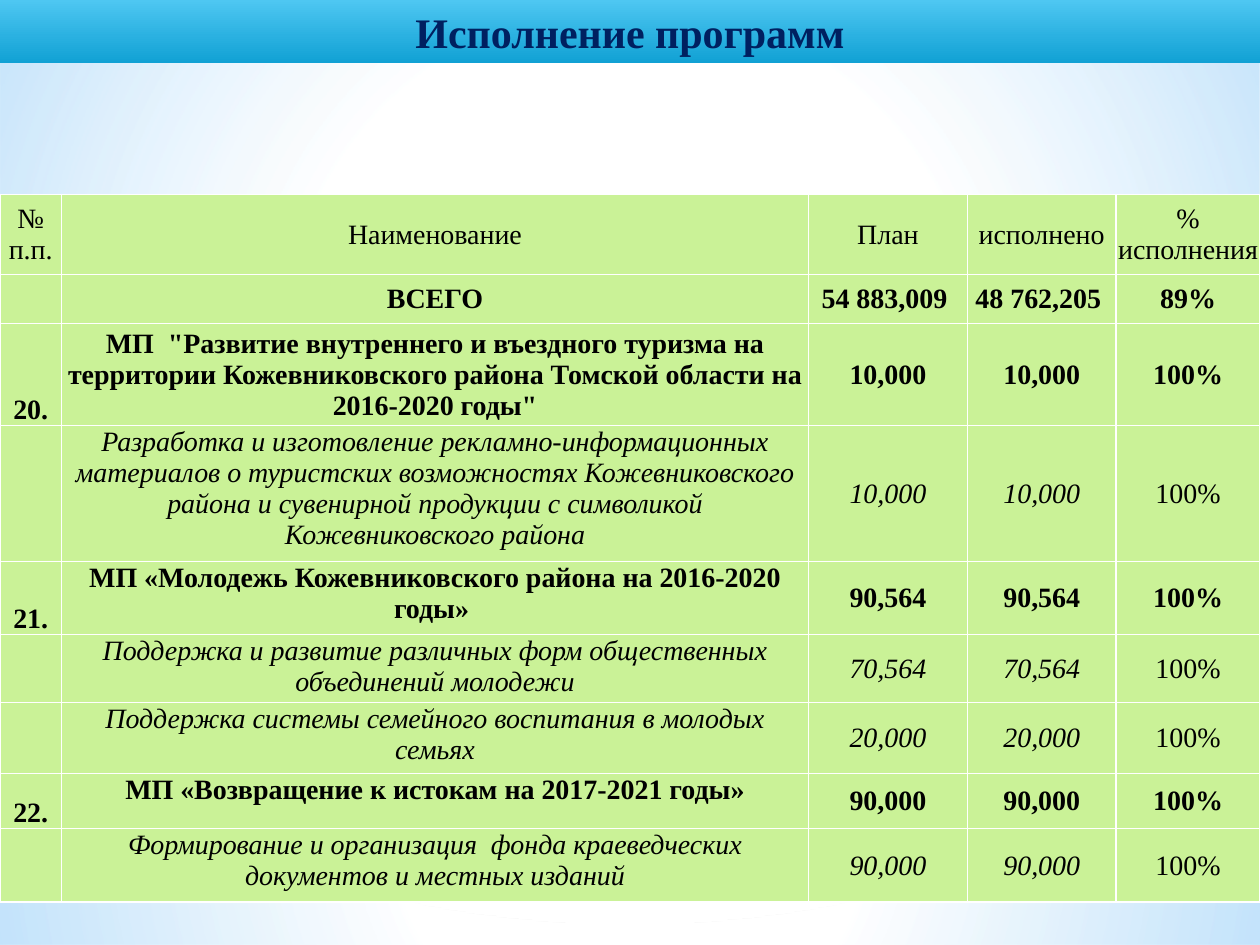
"""Build the slide on programme execution with its table of plan and result."""
from lxml import etree
from pptx import Presentation
from pptx.dml.color import RGBColor
from pptx.enum.shapes import MSO_SHAPE
from pptx.enum.text import MSO_ANCHOR, PP_ALIGN
from pptx.oxml.ns import qn
from pptx.util import Cm, Pt

RECTANGLE, OVAL = MSO_SHAPE.RECTANGLE, MSO_SHAPE.OVAL
TOP, MIDDLE, BOTTOM = MSO_ANCHOR.TOP, MSO_ANCHOR.MIDDLE, MSO_ANCHOR.BOTTOM
CENTER = PP_ALIGN.CENTER
WHITE = RGBColor(0xFF, 0xFF, 0xFF)
BLACK = RGBColor(0x00, 0x00, 0x00)
NAVY = RGBColor(0x00, 0x20, 0x60)
PALE_BLUE = RGBColor(0xB4, 0xDC, 0xFA)
LIGHT_CYAN = RGBColor(0x4E, 0xC7, 0xF2)
DEEP_CYAN = RGBColor(0x11, 0xA1, 0xD4)
GREEN = RGBColor(0xCA, 0xF2, 0x97)
FONT = "Times New Roman"
WIDTH = Cm(25.4)


def add_band(kind, top, height, radial, stops):
    shape = slide.shapes.add_shape(kind, 0, Cm(top), WIDTH, Cm(height))
    shape.shadow.inherit = False
    shape.line.fill.background()
    shape.fill.background()
    gradient = etree.Element(qn("a:gradFill"), rotWithShape="1")
    stop_list = etree.SubElement(gradient, qn("a:gsLst"))
    for position, color, opacity in stops:
        stop = etree.SubElement(stop_list, qn("a:gs"), pos=str(position * 1000))
        tint = etree.SubElement(stop, qn("a:srgbClr"), val=str(color))
        if opacity < 100:
            etree.SubElement(tint, qn("a:alpha"), val=str(opacity * 1000))
    if radial:
        circle = etree.SubElement(gradient, qn("a:path"), path="circle")
        etree.SubElement(circle, qn("a:fillToRect"), l="50000", t="50000", r="50000", b="50000")
    else:
        etree.SubElement(gradient, qn("a:lin"), ang="5400000", scaled="0")
    properties = shape.fill._xPr
    properties.replace(properties.find(qn("a:noFill")), gradient)
    return shape


def write(paragraph, text, size, color, bold, italic):
    paragraph.text = text
    paragraph.alignment = CENTER
    font = paragraph.font
    font.name, font.size = FONT, Pt(size)
    font.bold, font.italic = bold, italic
    font.color.rgb = color


presentation = Presentation()
presentation.slide_width, presentation.slide_height = WIDTH, Cm(19.05)
slide = presentation.slides.add_slide(presentation.slide_layouts[6])

add_band(RECTANGLE, 14.17, 4.88, True,
         [(0, WHITE, 91), (37, WHITE, 76), (100, PALE_BLUE, 79)])
add_band(RECTANGLE, 0, 14.17, True,
         [(0, WHITE, 89), (48, WHITE, 62), (100, PALE_BLUE, 79)])
add_band(RECTANGLE, 10.46, 6.35, False,
         [(0, WHITE, 0), (29, WHITE, 30), (45, PALE_BLUE, 40),
          (55, WHITE, 26), (65, PALE_BLUE, 60), (100, WHITE, 0)])
add_band(OVAL, 4.45, 14.17, True, [(0, WHITE, 100), (56, WHITE, 0)])

HEADER, PROGRAMME, DETAIL = "header", "programme", "detail"
rows = [
    (1.61, HEADER, MIDDLE, "№ п.п.", "Наименование", "План", "исполнено", "% исполнения"),
    (0.99, PROGRAMME, MIDDLE, "", "ВСЕГО", "54 883,009 ", "48 762,205 ", "89%"),
    (2.06, PROGRAMME, MIDDLE, "20.",
     "МП  \"Развитие внутреннего и въездного туризма на территории Кожевниковского "
     "района Томской области на 2016-2020 годы\"", "10,000", "10,000", "100%"),
    (2.74, DETAIL, TOP, "",
     "Разработка и изготовление рекламно-информационных материалов о туристских "
     "возможностях Кожевниковского района и сувенирной продукции с символикой "
     "Кожевниковского района", "10,000", "10,000", "100%"),
    (1.47, PROGRAMME, TOP, "21.",
     "МП «Молодежь Кожевниковского района на 2016-2020 годы» ", "90,564", "90,564", "100%"),
    (1.37, DETAIL, TOP, "",
     "Поддержка и развитие различных форм общественных объединений молодежи",
     "70,564", "70,564", "100%"),
    (1.43, DETAIL, TOP, "",
     "Поддержка системы семейного воспитания в молодых семьях",
     "20,000", "20,000", "100%"),
    (1.11, PROGRAMME, TOP, "22.",
     "МП «Возвращение к истокам на 2017-2021 годы»", "90,000", "90,000", "100%"),
    (1.48, DETAIL, TOP, "",
     "Формирование и организация  фонда краеведческих документов и местных изданий",
     "90,000", "90,000", "100%"),
]
column_widths = [1.24, 15.06, 3.2, 3, 2.9]
table_height = sum(row[0] for row in rows)
table = slide.shapes.add_table(len(rows), len(column_widths), 0, Cm(3.92),
                               WIDTH, Cm(table_height)).table
table.first_row = table.horz_banding = False
for column, width in zip(table.columns, column_widths):
    column.width = Cm(width)

for row_index, (height, style, name_anchor, *texts) in enumerate(rows):
    table.rows[row_index].height = Cm(height)
    number_anchor = MIDDLE if style == HEADER else BOTTOM
    anchors = [number_anchor, name_anchor, MIDDLE, MIDDLE, MIDDLE]
    for column_index, (text, anchor) in enumerate(zip(texts, anchors)):
        cell = table.cell(row_index, column_index)
        cell.margin_left = cell.margin_right = cell.margin_top = Cm(0.02)
        cell.margin_bottom = 0
        cell.vertical_anchor = anchor
        for edge in ("a:lnL", "a:lnR", "a:lnT", "a:lnB"):
            border = etree.SubElement(cell._tc.get_or_add_tcPr(), qn(edge), w=str(Pt(1)))
            border_fill = etree.SubElement(border, qn("a:solidFill"))
            etree.SubElement(border_fill, qn("a:srgbClr"), val=str(WHITE))
        cell.fill.solid()
        cell.fill.fore_color.rgb = GREEN
        italic = style == DETAIL and column_index < 4
        write(cell.text_frame.paragraphs[0], text, 16, BLACK, style == PROGRAMME, italic)

title = add_band(RECTANGLE, 0, 1.27, False, [(0, LIGHT_CYAN, 100), (100, DEEP_CYAN, 100)])
title.text_frame.vertical_anchor = MIDDLE
write(title.text_frame.paragraphs[0], "Исполнение программ", 24, NAVY, True, False)

presentation.save("out.pptx")
